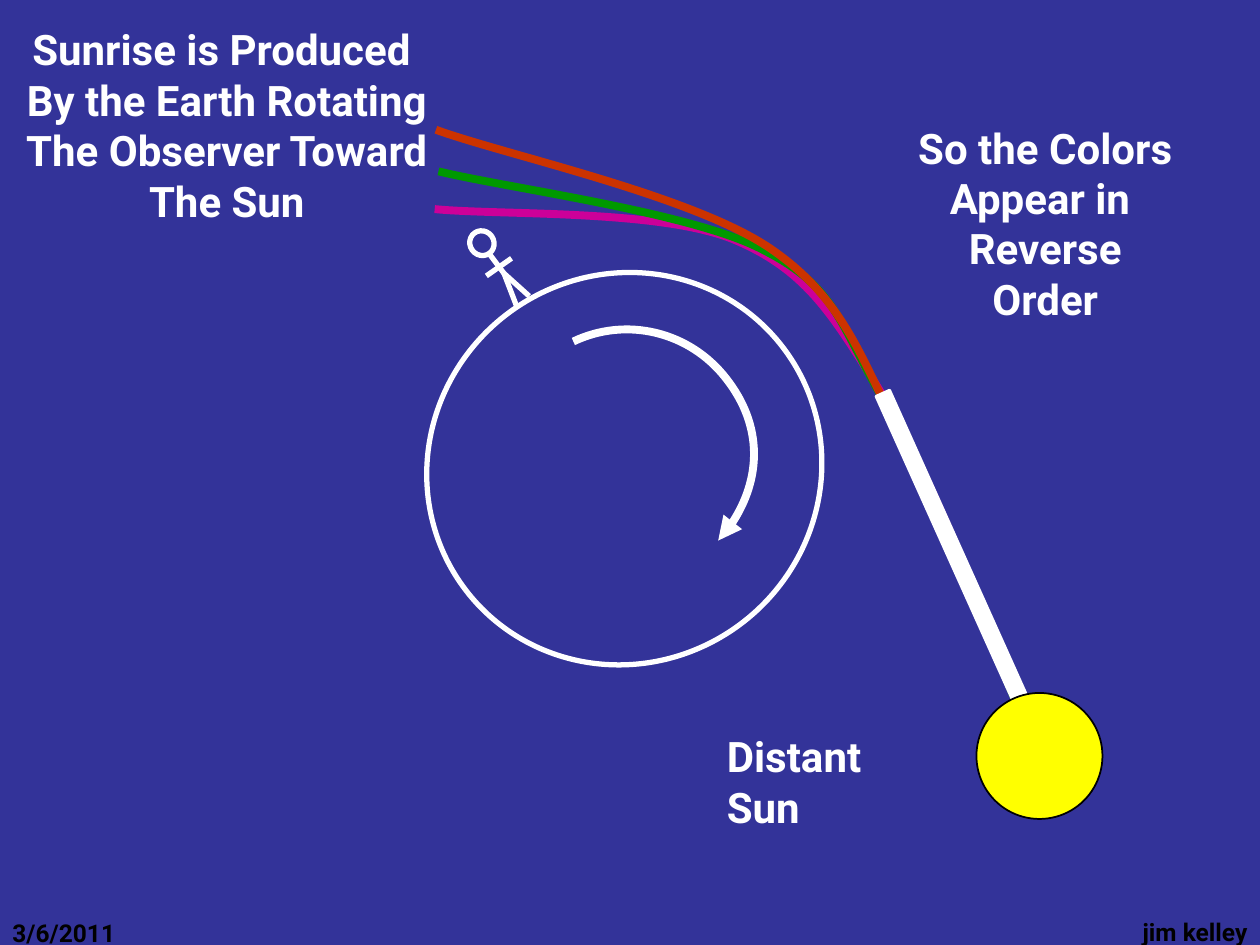
from math import cos, radians, sin

from lxml import etree
from pptx import Presentation
from pptx.dml.color import RGBColor
from pptx.enum.shapes import MSO_CONNECTOR, MSO_SHAPE
from pptx.enum.text import MSO_ANCHOR, MSO_AUTO_SIZE, PP_ALIGN
from pptx.oxml.ns import qn
from pptx.util import Cm, Pt

THEME = dict(font="Roboto", back="333399", white="FFFFFF", black="000000",
             sun="FFFF00", red="CC3300", green="009900", violet="CC0099",
             body=24, foot=14, thick=4.5, line=3, beam=1.5, thin=1)
INCH = 2.54  # places below are in inches

TITLE = ["Sunrise is Produced ", "By the Earth Rotating",
         "The Observer Toward", "The Sun"]
TITLE_BOX = (0.1, 0.14, 3.4, 1.7)

# lines, box, alignment, size, colour
NOTES = [
    (["3/6/2011"], (0, 7.24, 2.33, 0.52), PP_ALIGN.LEFT, "foot", "black"),
    (["jim kelley"], (6.83, 7.23, 3.17, 0.52), PP_ALIGN.RIGHT, "foot", "black"),
    (["Distant Sun"], (5.67, 5.75, 1.8, 0.9), PP_ALIGN.LEFT, "body", "white"),
    (["So the Colors", "Appear in ", "Reverse Order"],
     (7.17, 0.92, 2.25, 1.7), PP_ALIGN.CENTER, "body", "white"),
]

# colour, box, Bezier points: a start, then two controls and an end per curve
RAYS = [
    ("violet", (3.45, 1.66, 4.72, 4.07),
     [(8.18, 5.73), (7.98, 5.31), (7.41, 3.8), (7.02, 3.16),
      (6.62, 2.52), (6.42, 2.15), (5.82, 1.9),
      (5.23, 1.66), (3.95, 1.71), (3.45, 1.66)]),
    ("green", (3.48, 1.36, 4.61, 4.25),
     [(8.08, 5.61), (7.9, 5.19), (7.32, 3.72), (6.98, 3.12),
      (6.64, 2.51), (6.61, 2.26), (6.03, 1.97),
      (5.45, 1.68), (4.01, 1.49), (3.48, 1.36)]),
    ("red", (3.46, 1.03, 4.72, 4.75),
     [(8.18, 5.78), (8.01, 5.4), (7.53, 4.18), (7.19, 3.54),
      (6.85, 2.9), (6.73, 2.39), (6.11, 1.97),
      (5.49, 1.55), (4.01, 1.23), (3.46, 1.03)]),
]
SPIN = ("white", (4.87, 2.33, 1, 1.96),
        [(5.7, 4.29), (6.04, 3.93), (6.06, 3.38), (5.76, 3),
         (5.47, 2.63), (4.97, 2.51), (4.55, 2.71)], 141.9)

# preset, box, turn, fill, line colour, line width
BEAM = (MSO_SHAPE.RECTANGLE, (7.51, 3, 0.12, 2.75), 335.8, "white", "white", "beam")
SUN = (MSO_SHAPE.OVAL, (7.75, 5.5, 1, 1), 0, "sun", "black", "thin")
HEAD = (MSO_SHAPE.OVAL, (3.73, 1.83, 0.19, 0.2), 324.5, None, "white", "line")
EARTH = (MSO_SHAPE.OVAL, (3.37, 2.18, 3.17, 3.08), 321.9, None, "white", "line")

HIP = (4, 2.17)
LIMBS = [((3.88, 2.01), HIP), (HIP, (4.1, 2.43)), (HIP, (4.2, 2.35)),
         ((3.86, 2.19), (4.06, 2.05))]


def cm(vals):
    return [Cm(v * INCH) for v in vals]


def color(name):
    return RGBColor.from_string(THEME[name])


def pen(shape, name, width):
    shape.line.color.rgb = color(name)
    shape.line.width = Pt(THEME[width])


def write(shape, lines, align, size, tint, wrap=True):
    frame = shape.text_frame
    frame.auto_size = MSO_AUTO_SIZE.NONE
    frame.word_wrap = wrap
    frame.vertical_anchor = MSO_ANCHOR.TOP
    for i, line in enumerate(lines):
        para = frame.add_paragraph() if i else frame.paragraphs[0]
        para.alignment = align
        run = para.add_run()
        run.text = line
        run.font.name = THEME["font"]
        run.font.size = Pt(THEME[size])
        run.font.bold = True
        run.font.color.rgb = color(tint)


def place(shape, box):
    shape.left, shape.top, shape.width, shape.height = cm(box)


def local(pts, box, turn):
    """Return points as seen from the corner of the box before its turn."""
    left, top, wide, high = box
    c, s = cos(radians(turn)), sin(radians(turn))
    for x, y in pts:
        dx, dy = x - left - wide / 2, y - top - high / 2
        yield cm((dx * c + dy * s + wide / 2, dy * c - dx * s + high / 2))


def curve(shapes, tint, box, pts, turn=0):
    form = shapes.build_freeform(*cm(pts[0]))
    form.add_line_segments([cm(pts[-1])], close=False)
    shape = form.convert_to_shape()
    place(shape, box)
    shape.rotation = turn

    track = next(shape._element.iter(qn("a:path")))
    for part in list(track):
        track.remove(part)
    track.set("w", str(shape.width))
    track.set("h", str(shape.height))
    for i, (x, y) in enumerate(local(pts, box, turn)):
        if i == 0:
            step = etree.SubElement(track, qn("a:moveTo"))
        elif i % 3 == 1:
            step = etree.SubElement(track, qn("a:cubicBezTo"))
        etree.SubElement(step, qn("a:pt"), x=str(x), y=str(y))

    shape.shadow.inherit = False
    shape.fill.background()
    pen(shape, tint, "thick")
    return shape


def solid(shapes, kind, box, turn, fill, tint, width):
    shape = shapes.add_shape(kind, *cm(box))
    shape.shadow.inherit = False
    shape.rotation = turn
    if fill:
        shape.fill.solid()
        shape.fill.fore_color.rgb = color(fill)
    else:
        shape.fill.background()
    pen(shape, tint, width)


def limb(shapes, start, end):
    shape = shapes.add_connector(MSO_CONNECTOR.STRAIGHT, *cm(start + end))
    pen(shape, "white", "line")
    etree.SubElement(shape._element.spPr, qn("a:effectLst"))


def main():
    deck = Presentation()
    deck.slide_width, deck.slide_height = cm((10, 7.5))
    slide = deck.slides.add_slide(deck.slide_layouts[5])
    slide.background.fill.solid()
    slide.background.fill.fore_color.rgb = color("back")
    shapes = slide.shapes

    place(shapes.title, TITLE_BOX)
    write(shapes.title, TITLE, PP_ALIGN.CENTER, "body", "white", wrap=False)
    for lines, box, *style in NOTES:
        write(shapes.add_textbox(*cm(box)), lines, *style)

    for ray in RAYS:
        curve(shapes, *ray)
    solid(shapes, *BEAM)
    solid(shapes, *SUN)

    spin = curve(shapes, *SPIN)
    etree.SubElement(spin.line._get_or_add_ln(), qn("a:headEnd"), type="triangle")
    for start, end in LIMBS:
        limb(shapes, start, end)
    solid(shapes, *HEAD)
    solid(shapes, *EARTH)
    deck.save("out.pptx")


if __name__ == "__main__":
    main()
